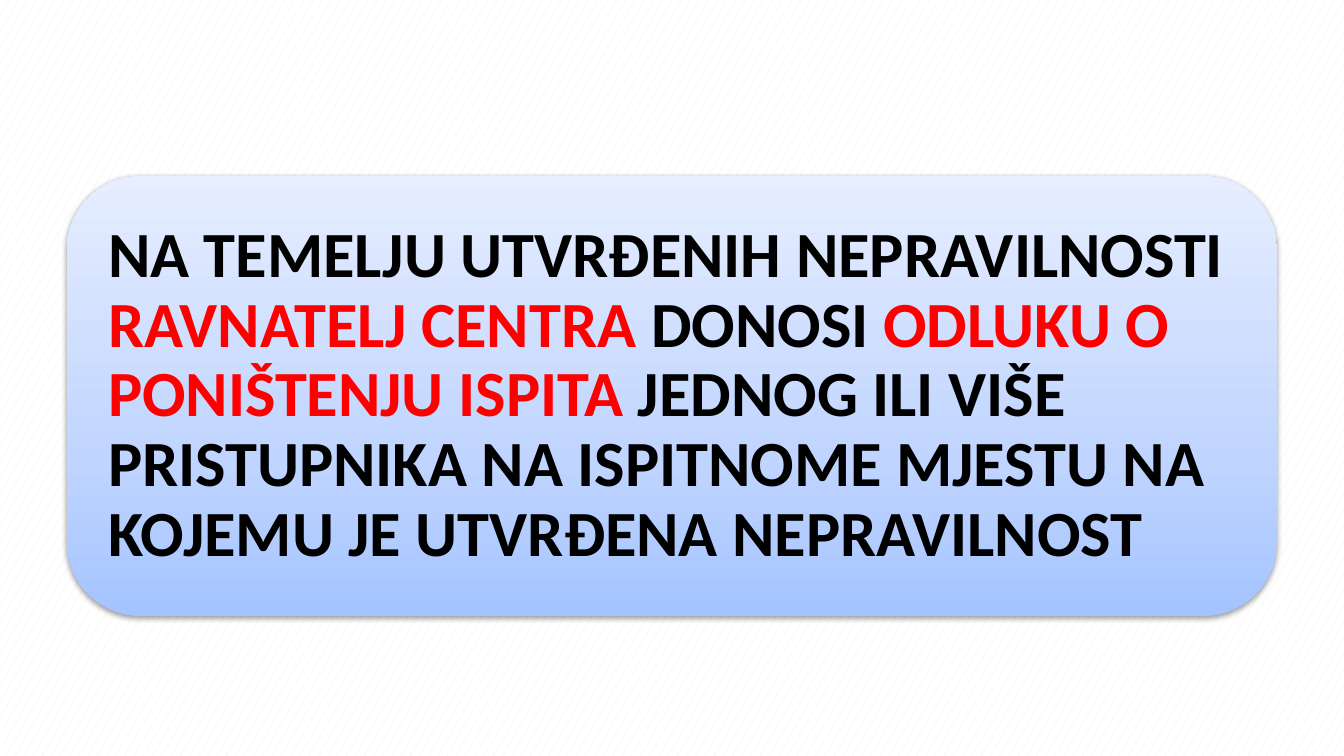
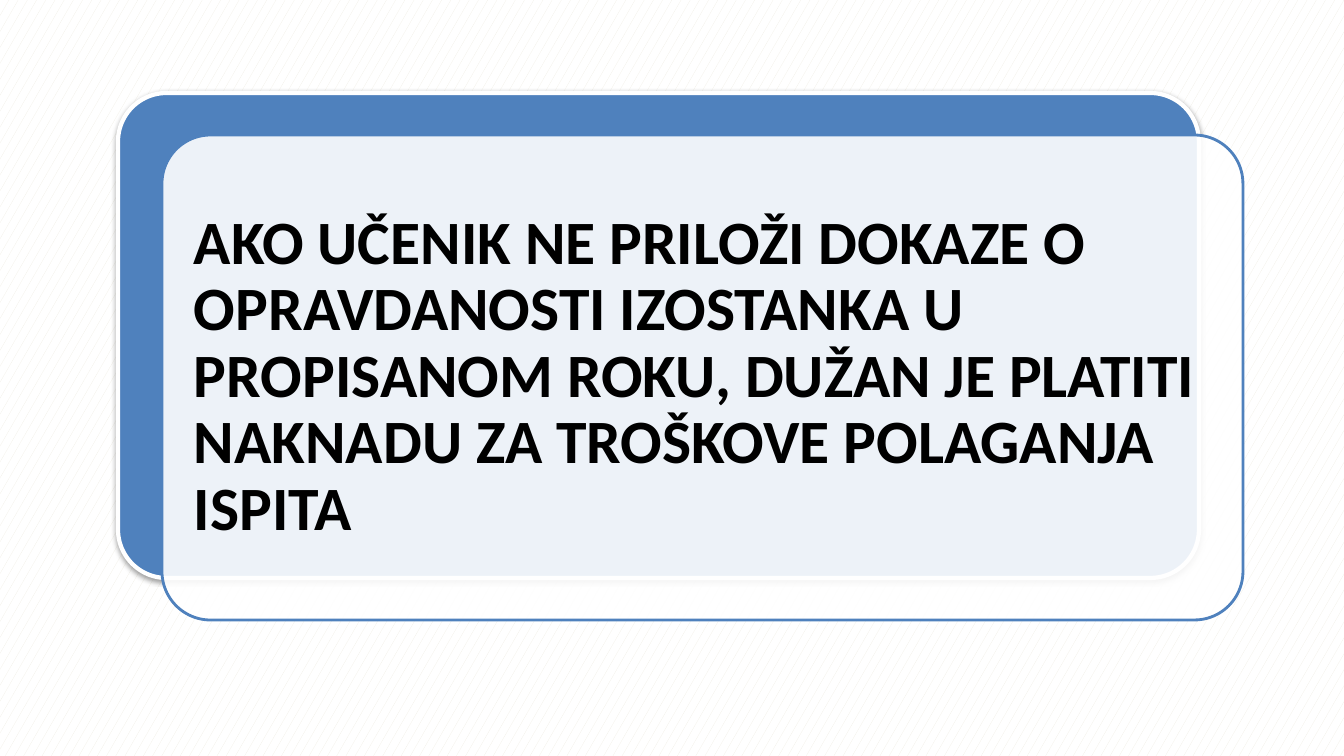
import pptx
import pptx.dml.color
import pptx.enum.dml
import pptx.enum.shapes
import pptx.enum.text
import pptx.oxml
import pptx.oxml.ns
import pptx.util
from copy import deepcopy

RGB = pptx.dml.color.RGBColor
Pt = pptx.util.Pt
qn = pptx.oxml.ns.qn

BLACK = RGB(0x00, 0x00, 0x00)
WHITE = RGB(0xFF, 0xFF, 0xFF)
RED = RGB(0xFF, 0x00, 0x00)
BLUE = RGB(0x4F, 0x81, 0xBD)
CREAM = RGB(0xEE, 0xEC, 0xE1)
SKY = ((0, RGB(0xA4, 0xC4, 0xFF)), (0.35, RGB(0xBF, 0xD4, 0xFF)), (1, RGB(0xE6, 0xEE, 0xFF)))

FONT = "Calibri"
WIDTH, HEIGHT = 1344, 756
SCALE = 12192000 / WIDTH

SHADOW = (
    '<a:outerShdw xmlns:a="http://schemas.openxmlformats.org/drawingml/2006/main"'
    ' blurRad="40000" dist="20000" dir="5400000" rotWithShape="0">'
    '<a:srgbClr val="000000"><a:alpha val="38000"/></a:srgbClr></a:outerShdw>'
)


def px(n):
    return pptx.util.Emu(round(n * SCALE))


class Deck:
    def __init__(self):
        self.prs = pptx.Presentation()
        self.prs.slide_width, self.prs.slide_height = px(WIDTH), px(HEIGHT)
        self.slide = None

    def new_slide(self):
        self.slide = self.prs.slides.add_slide(self.prs.slide_layouts[6])
        fill = self.slide.background.fill
        fill.patterned()
        fill.pattern = pptx.enum.dml.MSO_PATTERN.SMALL_CONFETTI
        fill.fore_color.rgb = CREAM
        fill.back_color.rgb = WHITE

    def panel(self, box, fill, line=None, line_pt=0, corner=None, opacity=100, shadow=False):
        """Rounded panel; fill is one colour or a series of gradient stops, bottom to top."""
        sp = self.slide.shapes.add_shape(
            pptx.enum.shapes.MSO_SHAPE.ROUNDED_RECTANGLE, *map(px, box))
        if corner is not None:
            sp.adjustments[0] = corner
        if isinstance(fill, RGB):
            sp.fill.solid()
            sp.fill.fore_color.rgb = fill
        else:
            self.gradient(sp, fill)
        if opacity < 100:
            color = sp.fill._xPr.find(qn("a:solidFill"))[0]
            pptx.oxml.ns.qn
            color.append(pptx.oxml.parse_xml(
                '<a:alpha xmlns:a="http://schemas.openxmlformats.org/drawingml/2006/main"'
                f' val="{opacity * 1000}"/>'))
        if line is None:
            sp.line.fill.background()
        else:
            sp.line.color.rgb = line
            sp.line.width = Pt(line_pt)
        sp.shadow.inherit = False
        if shadow:
            effects = sp._element.spPr.find(qn("a:effectLst"))
            effects.append(pptx.oxml.parse_xml(SHADOW))

    def gradient(self, sp, stops):
        sp.fill.gradient()
        sp.fill.gradient_angle = 90
        stop_list = next(sp._element.spPr.iter(qn("a:gsLst")))
        while len(stop_list) < len(stops):
            stop_list.append(deepcopy(stop_list[0]))
        for stop, (position, color) in zip(sp.fill.gradient_stops, stops):
            stop.position = position
            stop.color.rgb = color

    def statement(self, box, runs, size, inset):
        sp = self.slide.shapes.add_textbox(*map(px, box))
        tf = sp.text_frame
        tf.word_wrap = True
        tf.vertical_anchor = pptx.enum.text.MSO_ANCHOR.MIDDLE
        tf.margin_left = tf.margin_right = tf.margin_top = tf.margin_bottom = px(inset)
        p = tf.paragraphs[0]
        p.line_spacing = 0.9
        p.font.name, p.font.size, p.font.bold = FONT, Pt(size), True
        for text, color in runs:
            r = p.add_run()
            r.text = text
            r.font.color.rgb = color


def decision_slide(deck):
    deck.new_slide()
    deck.panel((67, 176, 1210, 440), SKY, shadow=True)
    deck.statement((89, 198, 1166, 396), [
        ("NA TEMELJU UTVRĐENIH NEPRAVILNOSTI ", BLACK),
        ("RAVNATELJ CENTRA ", RED),
        ("DONOSI ", BLACK),
        ("ODLUKU O PONIŠTENJU ISPITA ", RED),
        ("JEDNOG ILI VIŠE PRISTUPNIKA NA ISPITNOME MJESTU NA "
         "KOJEMU JE UTVRĐENA NEPRAVILNOST", BLACK),
    ], 46, 19)


def fee_slide(deck):
    deck.new_slide()
    size = (1081, 485)
    deck.panel((118, 93, *size), BLUE, WHITE, 3, corner=0.1, shadow=True)
    deck.panel((162, 135, *size), WHITE, BLUE, 2, corner=0.1, opacity=90)
    deck.statement((176, 149, 1051, 457), [
        ("AKO UČENIK NE PRILOŽI DOKAZE O OPRAVDANOSTI IZOSTANKA U PROPISANOM ROKU, "
         "DUŽAN JE PLATITI NAKNADU ZA TROŠKOVE POLAGANJA ISPITA", BLACK),
    ], 44, 18)


def main():
    deck = Deck()
    decision_slide(deck)
    fee_slide(deck)
    deck.prs.save("out.pptx")


if __name__ == "__main__":
    main()
